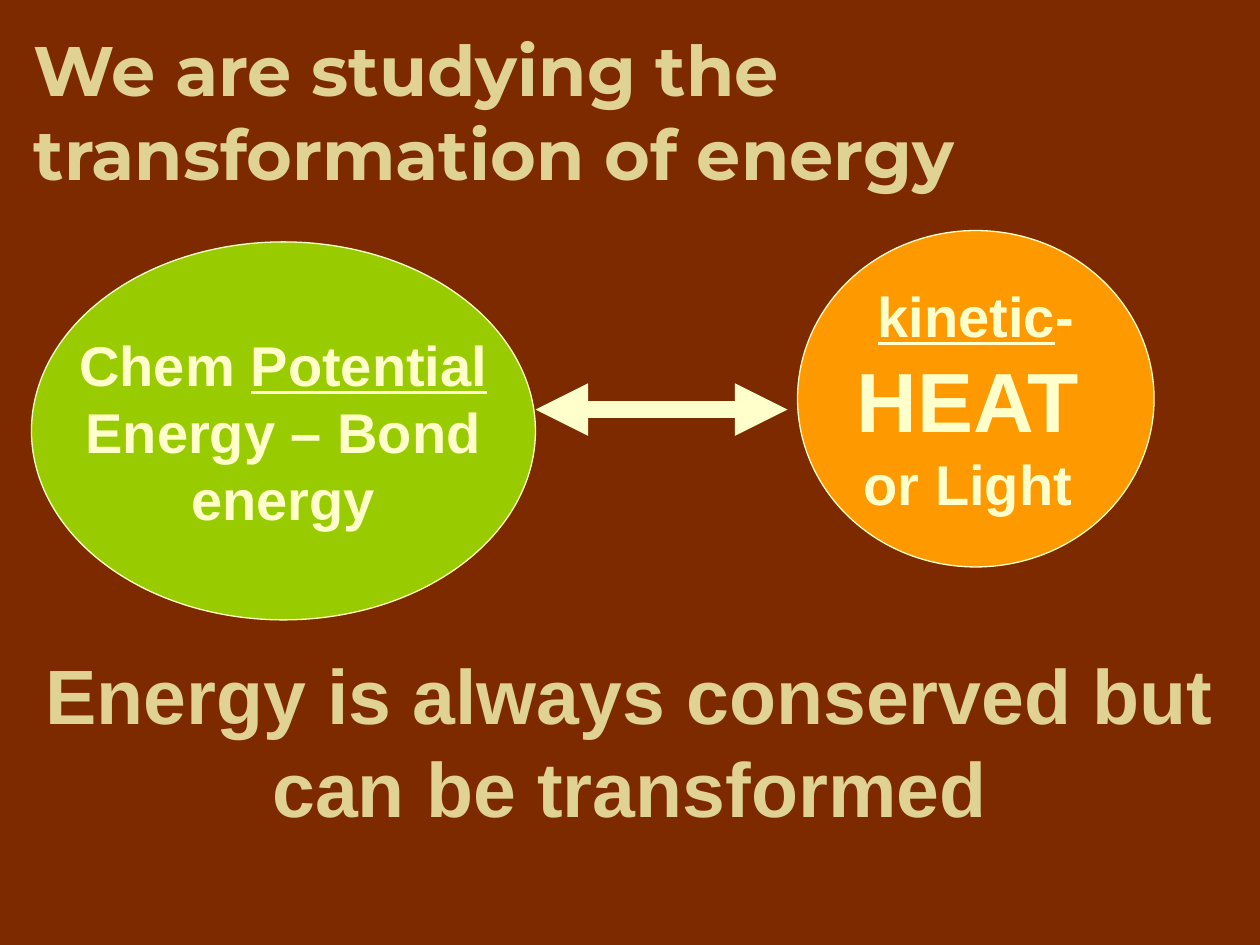
import pptx
import pptx.util
import pptx.dml.color
import pptx.enum.shapes
import pptx.enum.text
import pptx.oxml.ns
import lxml.etree

Inches = pptx.util.Inches
Pt = pptx.util.Pt
RGBColor = pptx.dml.color.RGBColor
ALIGN = pptx.enum.text.PP_ALIGN
MIDDLE = pptx.enum.text.MSO_ANCHOR.MIDDLE
BROWN = RGBColor(0x7E, 0x2A, 0x00)
SAND = RGBColor(0xDF, 0xD2, 0x93)
CREAM = RGBColor(0xFF, 0xFF, 0xCC)
ORANGE = RGBColor(0xFF, 0x99, 0x00)
GREEN = RGBColor(0x99, 0xCC, 0x00)


def style(font, size, name, color):
    font.size = Pt(size)
    font.name = name
    font.bold = True
    font.color.rgb = color


deck = pptx.Presentation()
deck.slide_width = Inches(10)
deck.slide_height = Inches(7.5)
slide = deck.slides.add_slide(deck.slide_layouts[6])
slide.background.fill.solid()
slide.background.fill.fore_color.rgb = BROWN

texts = [
    (0.17, 0.25, "We are studying the transformation of energy", 40, "Montserrat", ALIGN.LEFT),
    (0.25, 5.25, "Energy is always conserved but can be transformed", 44, "Arial", ALIGN.CENTER),
]
for left, top, words, size, face, align in texts:
    box = slide.shapes.add_textbox(Inches(left), Inches(top), Inches(9.5), Inches(1.25))
    frame = box.text_frame
    frame.word_wrap = True
    frame.vertical_anchor = MIDDLE
    para = frame.paragraphs[0]
    para.text = words
    para.alignment = align
    style(para.font, size, face, SAND)

ovals = [
    (6.33, 1.83, 2.83, 2.67, ORANGE, [
        [("kinetic", 32, True), ("-", 32, False)],
        [("HEAT", 48, False), (" ", 32, False)],
        [("or Light ", 32, False)],
    ]),
    (0.25, 1.92, 4, 3, GREEN, [
        [("Chem ", 32, False), ("Potential", 32, True)],
        [(" Energy – Bond ", 32, False)],
        [("energy", 32, False)],
    ]),
]
for left, top, width, height, color, lines in ovals:
    oval = slide.shapes.add_shape(
        pptx.enum.shapes.MSO_SHAPE.OVAL,
        Inches(left), Inches(top), Inches(width), Inches(height))
    oval.shadow.inherit = False
    oval.fill.solid()
    oval.fill.fore_color.rgb = color
    oval.line.color.rgb = CREAM
    oval.line.width = Pt(0.75)
    frame = oval.text_frame
    frame.word_wrap = False
    frame.vertical_anchor = MIDDLE
    for row, parts in enumerate(lines):
        para = frame.add_paragraph() if row else frame.paragraphs[0]
        para.alignment = ALIGN.CENTER
        style(para.font, 32, "Arial", CREAM)
        for words, size, under in parts:
            run = para.add_run()
            run.text = words
            if size != 32:
                run.font.size = Pt(size)
            if under:
                run.font.underline = True

arrow = slide.shapes.add_connector(
    pptx.enum.shapes.MSO_CONNECTOR.STRAIGHT,
    Inches(6.25), Inches(3.25), Inches(4.25), Inches(3.25))
arrow.line.color.rgb = CREAM
arrow.line.width = Pt(10)
edge = arrow.line._get_or_add_ln()
for end in ("a:headEnd", "a:tailEnd"):
    lxml.etree.SubElement(edge, pptx.oxml.ns.qn(end), type="triangle")
lxml.etree.SubElement(arrow._element.spPr, pptx.oxml.ns.qn("a:effectLst"))

deck.save("out.pptx")
